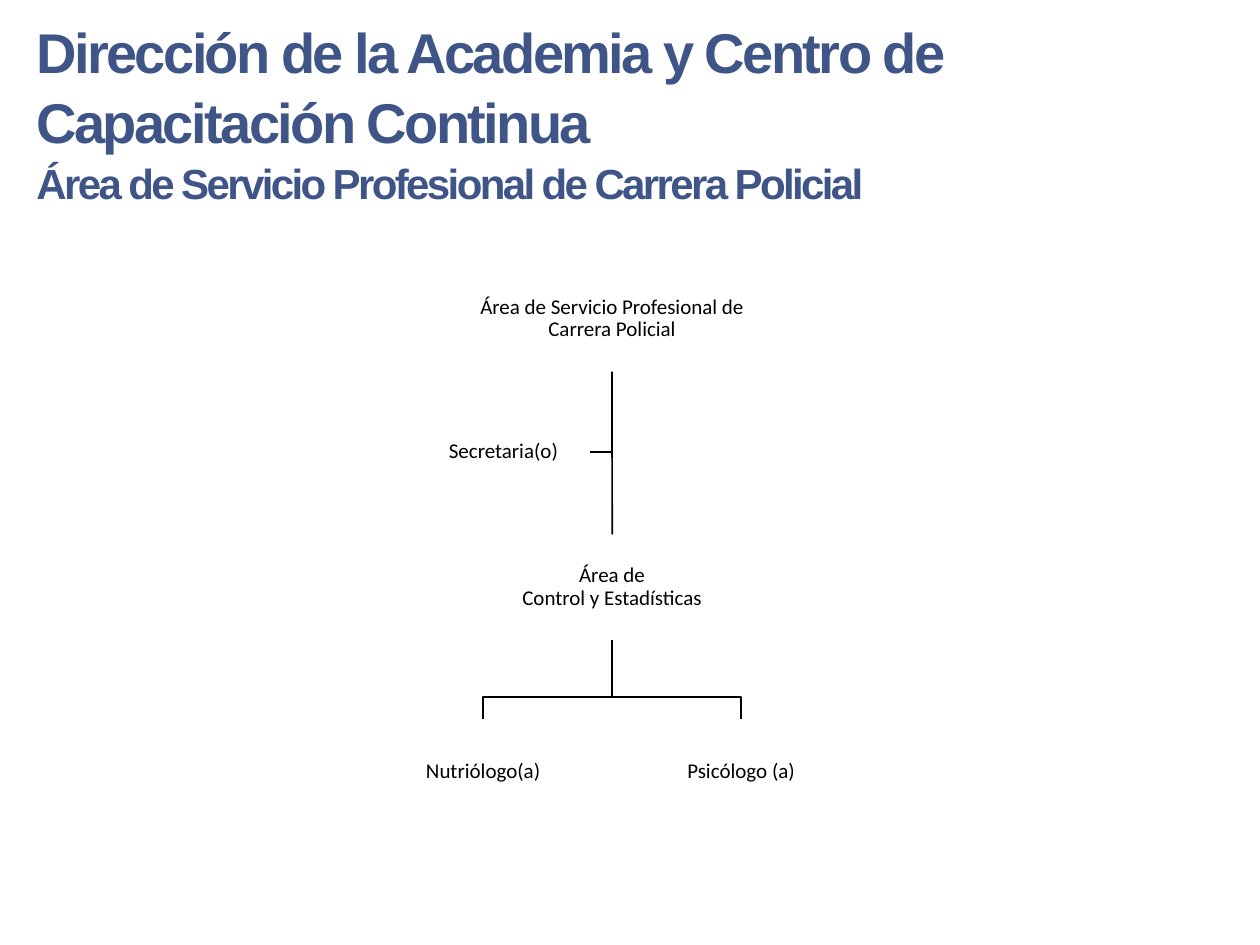
from pptx import Presentation
from pptx.dml.color import RGBColor
from pptx.enum.shapes import MSO_CONNECTOR, MSO_SHAPE
from pptx.enum.text import MSO_ANCHOR, MSO_AUTO_SIZE, PP_ALIGN
from pptx.oxml.ns import qn
from pptx.util import Cm, Pt
from lxml import etree

STRAIGHT = MSO_CONNECTOR.STRAIGHT
RECTANGLE = MSO_SHAPE.RECTANGLE
TOP, MIDDLE = MSO_ANCHOR.TOP, MSO_ANCHOR.MIDDLE
LEFT, CENTER = PP_ALIGN.LEFT, PP_ALIGN.CENTER
BOTTOM_SITE, TOP_SITE = 2, 0

BLUE, BLACK, WHITE = "3F5588", "000000", "FFFFFF"

# Organisation chart grid, in centimetres
AXIS = 12.34
BOX_WIDTH, BOX_HEIGHT = 4.29, 2.13
ROOT_TOP, CONTROL_TOP, STAFF_TOP = 5.36, 10.77, 14.5
STAFF_OFFSET = 2.6
BRANCH_Y = 14.05


def color(value):
    return RGBColor.from_string(value)


def set_font(para, name, size, value, bold=False):
    para.font.name = name
    para.font.size = Pt(size)
    para.font.bold = bold
    para.font.color.rgb = color(value)


def add_title(page, lines):
    title = page.shapes.title
    title.left, title.top = Cm(0.48), Cm(0.15)
    title.width, title.height = Cm(20.45), Cm(4.01)
    frame = title.text_frame
    frame.auto_size = MSO_AUTO_SIZE.NONE
    frame.vertical_anchor = TOP
    frame.text = "\n".join(text for text, _ in lines)
    for para, (_, size) in zip(frame.paragraphs, lines):
        para.alignment = LEFT
        para.line_spacing = 1.05
        set_font(para, "Arial", size, BLUE, bold=True)
        # Tighter letter spacing, in hundredths of a point
        for span in para.runs:
            span._r.get_or_add_rPr().set("spc", "-150")


def add_post(page, text, center, top, width=BOX_WIDTH, height=BOX_HEIGHT):
    box = page.shapes.add_shape(
        RECTANGLE, Cm(center - width / 2), Cm(top), Cm(width), Cm(height))
    box.shadow.inherit = False
    box.fill.solid()
    box.fill.fore_color.rgb = color(WHITE)
    box.line.fill.background()
    frame = box.text_frame
    frame.word_wrap = True
    frame.vertical_anchor = MIDDLE
    frame.margin_left = frame.margin_right = Cm(0.02)
    frame.margin_top = frame.margin_bottom = Cm(0.02)
    frame.text = text
    for para in frame.paragraphs:
        para.alignment = CENTER
        para.line_spacing = 0.9
        set_font(para, "Calibri", 12, BLACK)
    return box


def style_line(shape):
    shape.line.color.rgb = color(BLACK)
    shape.line.width = Pt(1)


def add_trunk(page, upper, lower):
    trunk = page.shapes.add_connector(STRAIGHT, 0, 0, 0, 0)
    trunk.begin_connect(upper, BOTTOM_SITE)
    trunk.end_connect(lower, TOP_SITE)
    style_line(trunk)
    etree.SubElement(trunk._element.spPr, qn("a:effectLst"))


def add_branch(page, points):
    start, *others = [(Cm(x), Cm(y)) for x, y in points]
    builder = page.shapes.build_freeform(*start)
    builder.add_line_segments(others, close=False)
    branch = builder.convert_to_shape()
    branch.shadow.inherit = False
    branch.fill.background()
    style_line(branch)


def main():
    deck = Presentation()
    deck.slide_width, deck.slide_height = Cm(25.4), Cm(19.05)
    page = deck.slides.add_slide(deck.slide_layouts[5])

    add_title(page, [
        ("Dirección de la Academia y Centro de Capacitación Continua", 32),
        ("Área de Servicio Profesional de Carrera Policial", 24),
    ])

    # Head of the area and the control area below it
    root = add_post(page, "Área de Servicio Profesional de Carrera Policial",
                    AXIS, ROOT_TOP, width=5.94)
    control = add_post(page, "Área de\nControl y Estadísticas",
                       AXIS, CONTROL_TOP)
    add_trunk(page, root, control)

    # Assistant beside the trunk
    root_bottom = ROOT_TOP + BOX_HEIGHT
    width, height, center, top = 3.48, 1.5, 10.15, 8.36
    add_post(page, "Secretaria(o)", center, top, width, height)
    middle = top + height / 2
    add_branch(page, [(AXIS, root_bottom), (AXIS, middle),
                      (center + width / 2, middle)])

    # Staff under the control area
    control_bottom = CONTROL_TOP + BOX_HEIGHT
    for text, side in (("Nutriólogo(a)", -1), ("Psicólogo (a)", 1)):
        center = AXIS + side * STAFF_OFFSET
        add_post(page, text, center, STAFF_TOP)
        add_branch(page, [(AXIS, control_bottom), (AXIS, BRANCH_Y),
                          (center, BRANCH_Y), (center, STAFF_TOP)])

    deck.save("out.pptx")


if __name__ == "__main__":
    main()
